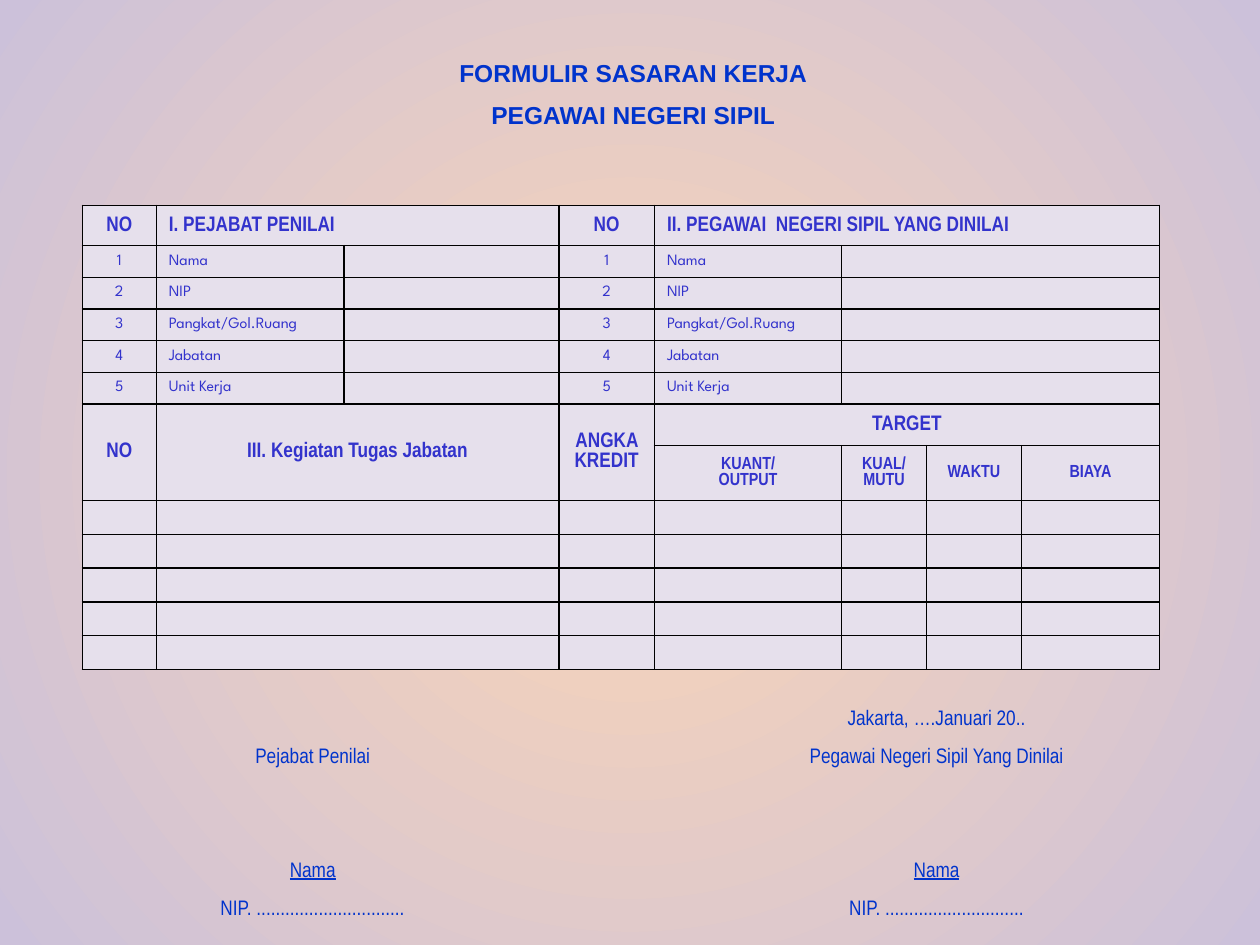
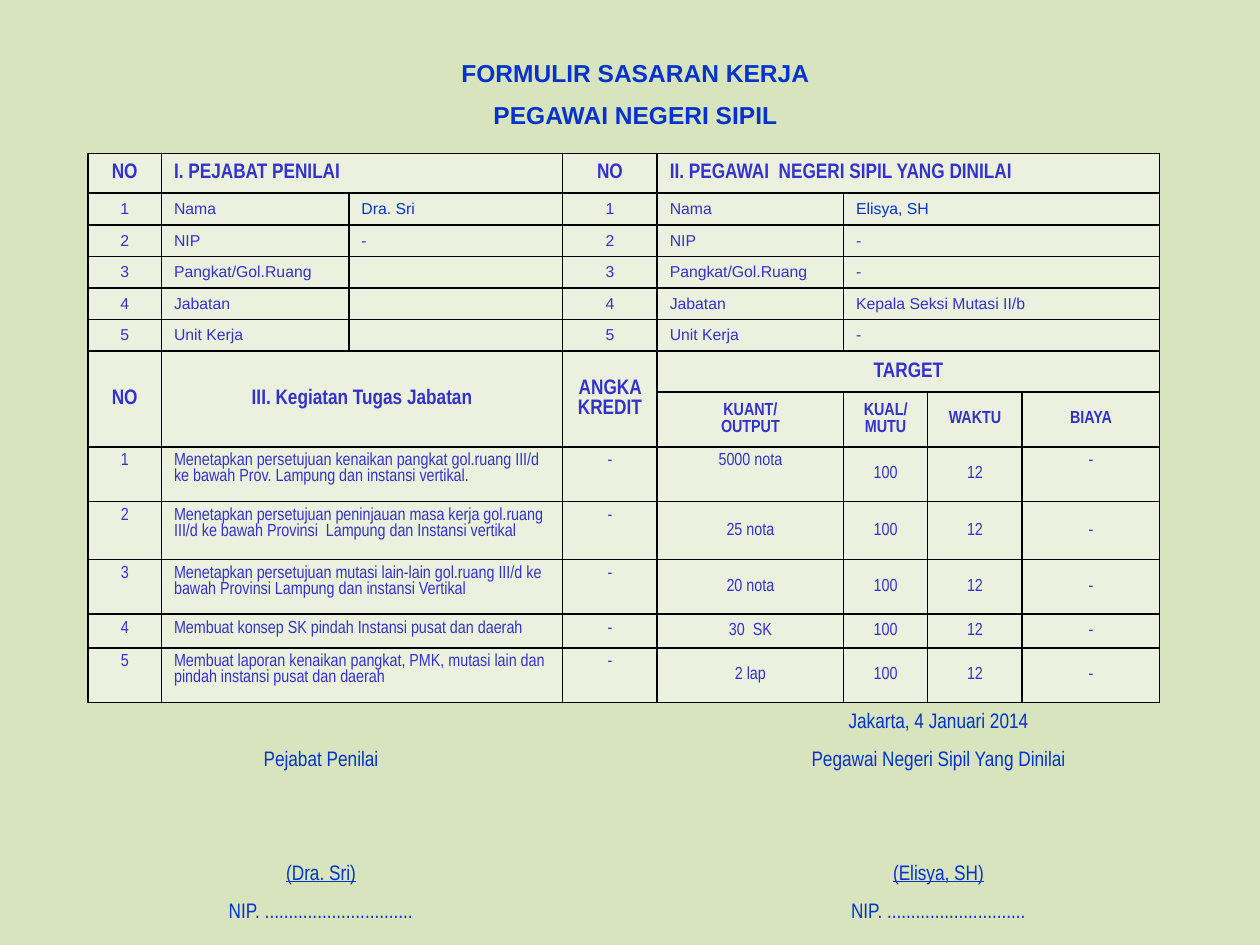
from dataclasses import dataclass
from typing import NamedTuple

from lxml.etree import SubElement
from pptx import Presentation
from pptx.dml.color import RGBColor
from pptx.enum.text import MSO_ANCHOR, MSO_AUTO_SIZE, PP_ALIGN
from pptx.oxml.ns import qn
from pptx.util import Pt

# Shared colours
BLUE = RGBColor(0x00, 0x33, 0xCC)
INDIGO = RGBColor(0x33, 0x33, 0xCC)
PEACH = RGBColor(0xFC, 0xD5, 0xB5)
LILAC = RGBColor(0xCC, 0xC1, 0xDA)
PALE_LILAC = RGBColor(0xE6, 0xE0, 0xEC)
SAGE = RGBColor(0xD7, 0xE4, 0xBD)
PALE_SAGE = RGBColor(0xEB, 0xF1, 0xDE)
BLACK = "000000"

NO_TABLE_STYLE = "{2D5ABB26-0587-4C30-8999-92F81FD0307C}"
TITLE = ("FORMULIR SASARAN KERJA", "PEGAWAI NEGERI SIPIL")
DETAILS = ("Nama", "NIP", "Pangkat/Gol.Ruang", "Jabatan", "Unit Kerja")
TARGETS = ("KUANT/\nOUTPUT", "KUAL/ MUTU", "WAKTU", "BIAYA")
HEADING_ROW, TARGET_ROW = 6, 7
FIRST_TASK_ROW = 8
TASK_COLUMNS = (0, 1, 3, 4, 5, 6, 7)
SIGNATURE_ROWS = 6


class Style(NamedTuple):
    font: str
    size: float
    color: RGBColor
    bold: bool = False
    underline: bool = False
    align: PP_ALIGN = PP_ALIGN.CENTER
    anchor: MSO_ANCHOR = MSO_ANCHOR.MIDDLE


HEADING = Style("Arial Narrow", 12, INDIGO, bold=True)
SECTION = HEADING._replace(align=PP_ALIGN.JUSTIFY)
TARGET = HEADING._replace(size=10)
TASK = TARGET._replace(bold=False)
TASK_TOP = TASK._replace(anchor=MSO_ANCHOR.TOP)
TASK_NAME = TASK_TOP._replace(align=PP_ALIGN.LEFT)
SIGNATURE = Style("Arial Narrow", 12, BLUE, anchor=MSO_ANCHOR.TOP)
SIGNER = SIGNATURE._replace(underline=True)
TITLE_STYLE = Style("Arial", 14, BLUE, bold=True)


@dataclass
class Form:
    title_left: float
    left: float
    top: float
    columns: tuple
    rows: tuple
    fill: RGBColor
    detail_font: str
    assessor: tuple
    employee: tuple
    tasks: tuple
    signature_left: float
    signature_top: float
    signature_columns: tuple
    date: str
    signers: tuple


def set_values(target, values: dict) -> None:
    for name, value in values.items():
        setattr(target, name, value)


def write(frame, text: str, style: Style) -> None:
    """Fill a text frame, one paragraph for each line of text."""
    for index, line in enumerate(text.split("\n")):
        para = frame.add_paragraph() if index else frame.paragraphs[0]
        para.alignment = style.align
        span = para.add_run()
        span.text = line
        set_values(span.font, {"name": style.font, "size": Pt(style.size),
                               "bold": style.bold, "underline": style.underline})
        span.font.color.rgb = style.color


def put(table, row: int, column: int, text: str, style: Style) -> None:
    cell = table.cell(row, column)
    cell.vertical_anchor = style.anchor
    if text:
        write(cell.text_frame, text, style)


def add_borders(cell) -> None:
    properties = cell._tc.get_or_add_tcPr()
    for side in ("a:lnL", "a:lnR", "a:lnT", "a:lnB"):
        line = SubElement(properties, qn(side), w=str(Pt(1)))
        SubElement(SubElement(line, qn("a:solidFill")), qn("a:srgbClr"), val=BLACK)


def add_grid(page, left: float, top: float, columns: tuple, rows: tuple):
    """Add an unstyled table whose empty cells stay low enough for their rows."""
    table = page.shapes.add_table(len(rows), len(columns), Pt(left), Pt(top),
                                  Pt(sum(columns)), Pt(sum(rows))).table
    set_values(table, {"first_row": False, "horz_banding": False})
    table._tbl.tblPr.find(qn("a:tableStyleId")).text = NO_TABLE_STYLE
    for column, width in zip(table.columns, columns):
        column.width = Pt(width)
    for row, height in zip(table.rows, rows):
        row.height = Pt(height)
    for cell in table.iter_cells():
        SubElement(cell.text_frame.paragraphs[0]._p, qn("a:endParaRPr"), sz="800")
    return table


def add_title(page, left: float) -> None:
    box = page.shapes.add_textbox(Pt(left), Pt(29.5), Pt(347), Pt(49.7))
    frame = box.text_frame
    set_values(frame, {"word_wrap": True, "auto_size": MSO_AUTO_SIZE.SHAPE_TO_FIT_TEXT})
    write(frame, "\n".join(TITLE), TITLE_STYLE)
    frame.paragraphs[1].space_before = Pt(7)


def merge_cells(table) -> None:
    areas = [(0, 1, 0, 2), (0, 4, 0, 7), (6, 0, 7, 0), (6, 1, 7, 2), (6, 3, 7, 3), (6, 4, 6, 7)]
    areas += [(row, 5, row, 7) for row in range(1, HEADING_ROW)]
    areas += [(row, 1, row, 2) for row in range(FIRST_TASK_ROW, len(table.rows))]
    for top, left, bottom, right in areas:
        table.cell(top, left).merge(table.cell(bottom, right))


def add_form_table(page, form: Form) -> None:
    table = add_grid(page, form.left, form.top, form.columns, form.rows)
    for cell in table.iter_cells():
        add_borders(cell)
        cell.fill.solid()
        cell.fill.fore_color.rgb = form.fill
    merge_cells(table)

    # Section headings
    for column, text in ((0, "NO"), (3, "NO")):
        put(table, 0, column, text, HEADING)
    for column, text in ((1, "I. PEJABAT PENILAI"),
                         (4, "II. PEGAWAI  NEGERI SIPIL YANG DINILAI")):
        put(table, 0, column, text, SECTION)

    # Personal details, left and right
    number = Style(form.detail_font, 9, INDIGO)
    label = number._replace(align=PP_ALIGN.JUSTIFY)
    for column, values in ((0, form.assessor), (3, form.employee)):
        for row, (name, value) in enumerate(zip(DETAILS, values), start=1):
            put(table, row, column, str(row), number)
            put(table, row, column + 1, name, label)
            put(table, row, column + 2, value,
                label._replace(color=BLUE if row == 1 else INDIGO))

    # Task headings
    for column, text in ((0, "NO"), (1, "III. Kegiatan Tugas Jabatan"),
                         (3, "ANGKA KREDIT"), (4, "TARGET")):
        put(table, HEADING_ROW, column, text, HEADING)
    for column, text in enumerate(TARGETS, start=4):
        put(table, TARGET_ROW, column, text, TARGET)

    # Tasks
    for index, (task, output, quality, months) in enumerate(form.tasks):
        row_values = (str(index + 1), task, "-", output, quality, months, "-")
        edge = TASK if index else TASK_TOP
        styles = (TASK_TOP, TASK_NAME, TASK_TOP, edge, TASK, TASK, edge)
        for column, text, style in zip(TASK_COLUMNS, row_values, styles):
            put(table, FIRST_TASK_ROW + index, column, text, style)


def add_signatures(page, form: Form) -> None:
    table = add_grid(page, form.signature_left, form.signature_top,
                     form.signature_columns, (21.7,) * SIGNATURE_ROWS)
    put(table, 0, 2, form.date, SIGNATURE)
    sides = ((0, "Pejabat Penilai", 31), (2, "Pegawai Negeri Sipil Yang Dinilai", 29))
    for (column, role, dots), signer in zip(sides, form.signers):
        put(table, 1, column, role, SIGNATURE)
        put(table, 4, column, signer, SIGNER)
        put(table, 5, column, "NIP. " + "." * dots, SIGNATURE)


def fill_radial(page, inner: RGBColor, outer: RGBColor) -> None:
    fill = page.background.fill
    fill.gradient()
    for stop, color, position in zip(fill.gradient_stops, (inner, outer), (0, 1)):
        stop.color.rgb = color
        stop.position = position
    gradient = page._element.find(".//" + qn("a:gradFill"))
    gradient.remove(gradient.find(qn("a:lin")))
    circle = SubElement(gradient, qn("a:path"), path="circle")
    SubElement(circle, qn("a:fillToRect"), l="50000", t="50000", r="50000", b="50000")


def fill_solid(page, color: RGBColor) -> None:
    page.background.fill.solid()
    page.background.fill.fore_color.rgb = color


BLANK_FORM = Form(
    title_left=188.4, left=47, top=117.4,
    columns=(42.3, 107.4, 122.7, 54.6, 107, 48.4, 54.4, 78.8),
    rows=(23,) + (18.1,) * 5 + (23.8, 31.5) + (19.3,) * 5,
    fill=PALE_LILAC, detail_font="League Spartan",
    assessor=("",) * 5, employee=("",) * 5, tasks=(),
    signature_left=36.2, signature_top=402.5, signature_columns=(285, 71.5, 285),
    date="Jakarta, ….Januari 20..", signers=("Nama", "Nama"))

FILLED_FORM = Form(
    title_left=189.6, left=50.3, top=87.6,
    columns=(42, 107.1, 122.2, 54, 106.5, 48.1, 54, 78.6),
    rows=(22.8,) + (17.6,) * 5 + (23.4, 26.8, 27.6, 33.1, 25.7, 17.7, 25.7),
    fill=PALE_SAGE, detail_font="Arial",
    assessor=("Dra. Sri", "-", "", "", ""),
    employee=("Elisya, SH", "-", "-", "Kepala Seksi Mutasi II/b", "-"),
    tasks=(
        ("Menetapkan persetujuan kenaikan pangkat gol.ruang III/d ke bawah Prov. Lampung "
         "dan instansi vertikal.", "5000 nota", "100", "12"),
        ("Menetapkan persetujuan peninjauan masa kerja gol.ruang III/d ke bawah Provinsi  "
         "Lampung dan Instansi vertikal", "25 nota", "100", "12"),
        ("Menetapkan persetujuan mutasi lain-lain gol.ruang III/d ke bawah Provinsi Lampung "
         "dan instansi Vertikal", "20 nota", "100", "12"),
        ("Membuat konsep SK pindah Instansi pusat dan daerah", "30  SK", "100", "12"),
        ("Membuat laporan kenaikan pangkat, PMK, mutasi lain dan pindah instansi pusat "
         "dan daerah", "2 lap", "100", "12")),
    signature_left=42.3, signature_top=403.8, signature_columns=(282.3, 70.6, 282.3),
    date="Jakarta, 4 Januari 2014", signers=("(Dra. Sri)", "(Elisya, SH)"))


def add_page(deck, form: Form):
    page = deck.slides.add_slide(deck.slide_layouts[6])
    add_title(page, form.title_left)
    add_form_table(page, form)
    add_signatures(page, form)
    return page


def main() -> None:
    deck = Presentation()
    set_values(deck, {"slide_width": Pt(720), "slide_height": Pt(540)})
    fill_radial(add_page(deck, BLANK_FORM), PEACH, LILAC)
    fill_solid(add_page(deck, FILLED_FORM), SAGE)
    deck.save("out.pptx")


if __name__ == "__main__":
    main()
